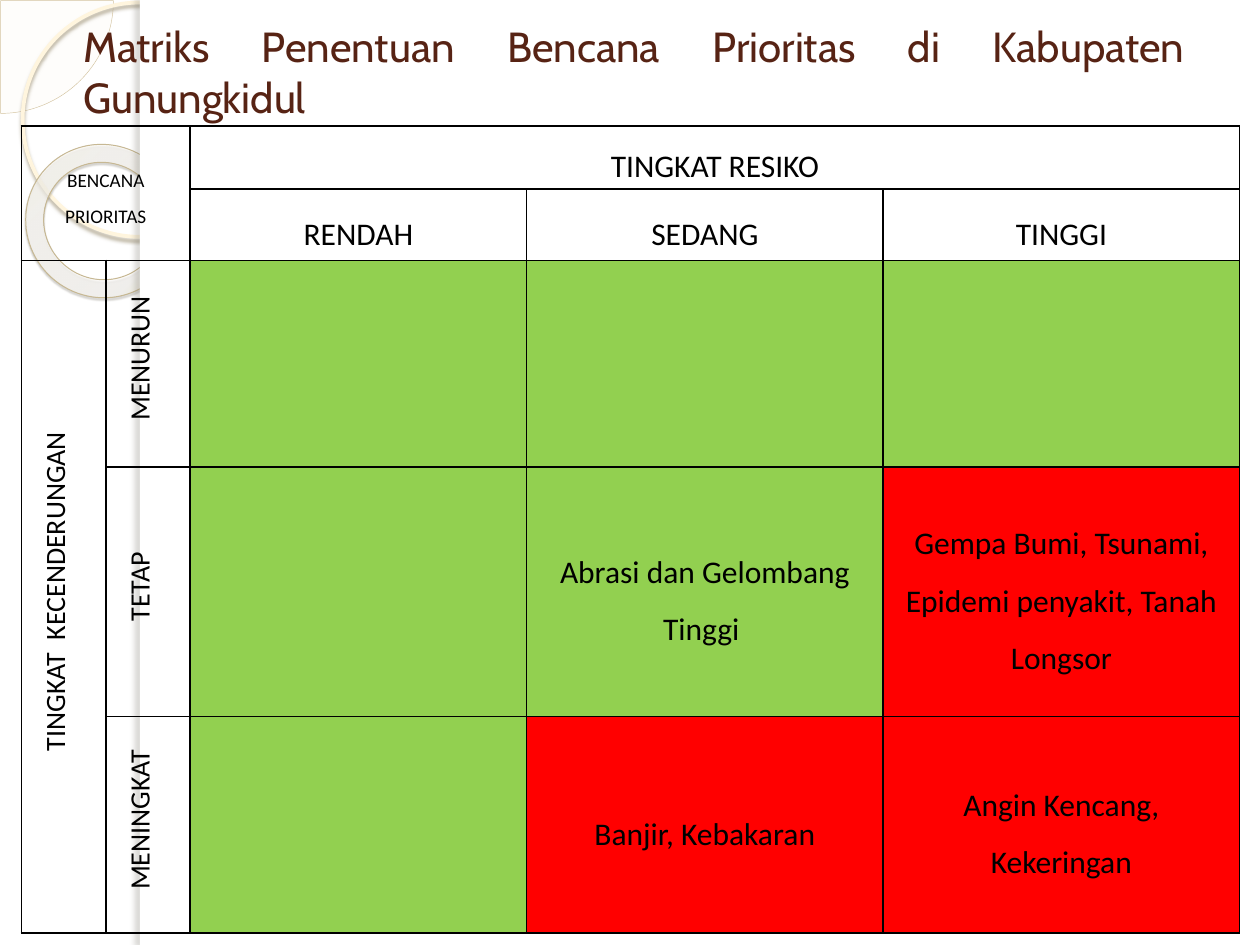
"""Build the disaster priority matrix slide for Gunungkidul."""
from lxml.etree import SubElement
from pptx import Presentation
from pptx.dml.color import RGBColor
from pptx.enum.shapes import MSO_SHAPE
from pptx.enum.text import MSO_ANCHOR, MSO_AUTO_SIZE, PP_ALIGN
from pptx.oxml import parse_xml
from pptx.oxml.ns import nsdecls, qn
from pptx.util import Inches, Pt

WHITE = RGBColor(0xFF, 0xFF, 0xFF)
BLACK = RGBColor(0x00, 0x00, 0x00)
BROWN = RGBColor(0x57, 0x23, 0x14)
GREEN = RGBColor(0x92, 0xD0, 0x50)
RED = RGBColor(0xFF, 0x00, 0x00)
CREAM = RGBColor(0xFE, 0xFA, 0xF4)
SAND = RGBColor(0xD3, 0xC3, 0x9F)
IVORY = RGBColor(0xFF, 0xF5, 0xDE)
KHAKI = RGBColor(0xC7, 0xB8, 0x93)
RING_SHADOW = RGBColor(0xB0, 0xA6, 0x8F)
DONUT_SHADOW = RGBColor(0x5A, 0x54, 0x44)
EDGE_SHADOW = RGBColor(0x73, 0x6F, 0x63)
DONUT_STOPS = [(0, RGBColor(0xFF, 0xFC, 0xF6), 70),
               (70, RGBColor(0xFF, 0xFE, 0xFB), 55),
               (100, RGBColor(0xF0, 0xD2, 0x8E), 60)]


def set_text(tf, text, size=18, font="Calibri", color=BLACK, align=PP_ALIGN.CENTER,
             spacing=1.5, after=6, indent=0):
    p = tf.paragraphs[0]
    p.alignment = align
    p.line_spacing = spacing
    p.space_before = Pt(0)
    p.space_after = Pt(after)
    pPr = p._p.get_or_add_pPr()
    pPr.set("marL", str(Inches(indent)))
    pPr.set("indent", "0")
    r = p.add_run()
    r.text = text
    r.font.size = Pt(size)
    r.font.name = font
    r.font.bold = False
    r.font.color.rgb = color


def add_color(parent, color, opacity):
    clr = SubElement(parent, qn("a:srgbClr"), val=str(color))
    SubElement(clr, qn("a:alpha"), val=str(opacity * 1000))


prs = Presentation()
prs.slide_width = Inches(10)
prs.slide_height = Inches(7.5)
s = prs.slides.add_slide(prs.slide_layouts[5])
s.background.fill.solid()
s.background.fill.fore_color.rgb = WHITE

decor = [
    (MSO_SHAPE.PIE, (-0.89, -0.89, 1.79, 1.79), [0, 54], CREAM, (SAND, 0.25), None),
    (MSO_SHAPE.OVAL, (0.18, 0.02, 1.86, 1.86), [], None, (IVORY, 2.15),
     (RING_SHADOW, 85, 2, 2, 90)),
    (MSO_SHAPE.DONUT, (0.2, 1.15, 1.23, 1.21), [0.118], None, (KHAKI, 0.58),
     (DONUT_SHADOW, 35, 1, 1.2, 75)),
    (MSO_SHAPE.RECTANGLE, (1.11, 0, 8.89, 7.5), [], WHITE, None, None),
    (MSO_SHAPE.RECTANGLE, (1.11, 0, 0.08, 7.5), [], WHITE, None,
     (EDGE_SHADOW, 25, 3, 3, 180)),
]
for kind, box, adjs, fill, line, shadow in decor:
    sp = s.shapes.add_shape(kind, *[Inches(v) for v in box])
    sp.shadow.inherit = False
    for i, adj in enumerate(adjs):
        sp.adjustments[i] = adj
    if fill is None:
        sp.fill.background()
    else:
        sp.fill.solid()
        sp.fill.fore_color.rgb = fill
    if line is None:
        sp.line.fill.background()
    else:
        sp.line.color.rgb = line[0]
        sp.line.width = Pt(line[1])
    spPr = sp._element.spPr
    if kind == MSO_SHAPE.PIE:
        clr = spPr.find(qn("a:solidFill")).find(qn("a:srgbClr"))
        SubElement(clr, qn("a:alpha"), val="33000")
    if kind == MSO_SHAPE.DONUT:
        sp.rotation = 38.6
        grad = parse_xml(f'<a:gradFill {nsdecls("a")}><a:gsLst/><a:path path="circle">'
                         '<a:fillToRect l="-408000" t="-50000" r="508000" b="150000"/>'
                         '</a:path></a:gradFill>')
        for pos, color, opacity in DONUT_STOPS:
            gs = SubElement(grad[0], qn("a:gs"), pos=str(pos * 1000))
            add_color(gs, color, opacity)
        spPr.replace(spPr.find(qn("a:noFill")), grad)
    if shadow:
        color, opacity, blur, dist, angle = shadow
        outer = SubElement(spPr.find(qn("a:effectLst")), qn("a:outerShdw"),
                           blurRad=str(Pt(blur)), dist=str(Pt(dist)),
                           dir=str(angle * 60000), algn="tl", rotWithShape="0")
        add_color(outer, color, opacity)

title = s.shapes.title
title.left, title.top, title.width, title.height = [Inches(v) for v in (0.5, 0.08, 9, 0.97)]
tf = title.text_frame
tf.word_wrap = True
tf.auto_size = MSO_AUTO_SIZE.NONE
tf.vertical_anchor = MSO_ANCHOR.MIDDLE
set_text(tf, "Matriks Penentuan Bencana Prioritas di Kabupaten Gunungkidul", size=24,
         font="Cabin", color=BROWN, align=PP_ALIGN.JUSTIFY, spacing=1.0, after=0, indent=0.06)
s.shapes._spTree.append(title._element)

col_widths = [0.67, 0.67, 2.67, 2.83, 2.83]
row_heights = [0.5, 0.5, 1.64, 1.98, 1.72]
labels = [
    ["BENCANA PRIORITAS", "", "TINGKAT RESIKO", "", ""],
    ["", "", "RENDAH", "SEDANG", "TINGGI"],
    ["TINGKAT  KECENDERUNGAN", "MENURUN", "", "", ""],
    ["", "TETAP", "", "Abrasi dan Gelombang Tinggi ",
     "Gempa Bumi, Tsunami, Epidemi penyakit, Tanah Longsor"],
    ["", "MENINGKAT", "", "Banjir, Kebakaran", "Angin Kencang, Kekeringan"],
]
table = s.shapes.add_table(5, 5, Inches(0.17), Inches(1), Inches(sum(col_widths)),
                           Inches(sum(row_heights))).table
table.first_row = False
table.horz_banding = False
for col, width in zip(table.columns, col_widths):
    col.width = Inches(width)
for row, height in zip(table.rows, row_heights):
    row.height = Inches(height)
for first, last in [((0, 0), (1, 1)), ((0, 2), (0, 4)), ((2, 0), (4, 0))]:
    table.cell(*first).merge(table.cell(*last))

for i, row in enumerate(labels):
    for j, text in enumerate(row):
        cell = table.cell(i, j)
        cell.vertical_anchor = MSO_ANCHOR.MIDDLE
        cell.margin_left = cell.margin_right = Inches(0.07)
        cell.margin_top = cell.margin_bottom = 0
        tcPr = cell._tc.get_or_add_tcPr()
        for side in ("lnL", "lnR", "lnT", "lnB"):
            ln = SubElement(tcPr, qn(f"a:{side}"), w=str(Pt(1)))
            SubElement(SubElement(ln, qn("a:solidFill")), qn("a:srgbClr"), val=str(BLACK))
        if i >= 2 and j >= 2:
            cell.fill.solid()
            cell.fill.fore_color.rgb = RED if i + j >= 7 else GREEN
        else:
            cell.fill.background()
        if not text:
            continue
        vertical = i >= 2 and j < 2
        if vertical:
            tcPr.set("vert", "vert270")
        size = 11 if i == j == 0 else 16 if vertical else 18
        set_text(cell.text_frame, text, size=size, indent=0.08 if vertical else 0)

prs.save("out.pptx")
